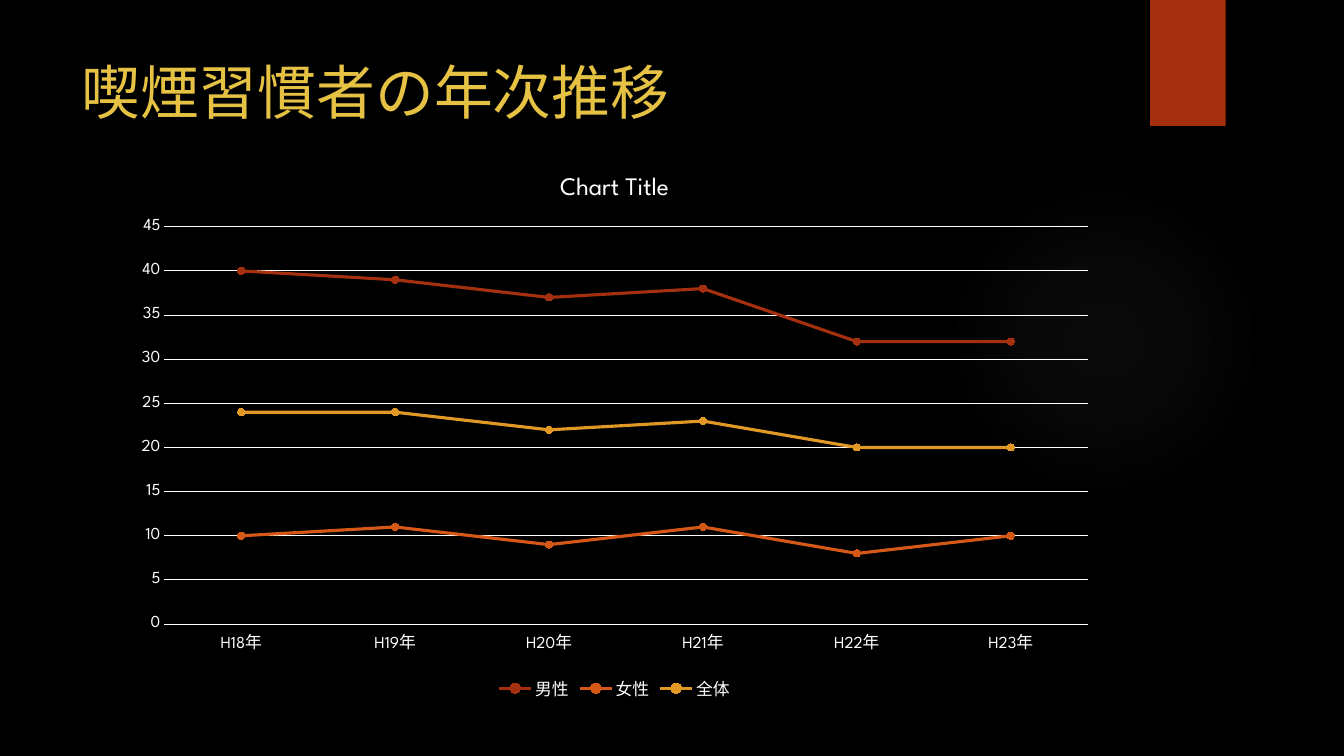
import pptx
import pptx.chart.data
import pptx.dml.color
import pptx.enum.chart
import pptx.enum.shapes
import pptx.enum.text
import pptx.oxml
import pptx.util
from lxml import etree

Pt = pptx.util.Pt
FONT = "League Spartan"
WHITE = "FFFFFF"
YEARS = ["H18年", "H19年", "H20年", "H21年", "H22年", "H23年"]
SMOKING_RATES = [
    ("男性", "A5300F", [40, 39, 37, 38, 32, 32]),
    ("女性", "D55816", [10, 11, 9, 11, 8, 10]),
    ("全体", "E19825", [24, 24, 22, 23, 20, 20]),
]


def rgb(value):
    return pptx.dml.color.RGBColor.from_string(value)


def style_font(font, size, color):
    font.name = FONT
    font.size = Pt(size)
    font.bold = False
    font.color.rgb = rgb(color)


def style_line(line, width, color):
    line.width = Pt(width)
    line.color.rgb = rgb(color)


def fill_solid(fill, color):
    fill.solid()
    fill.fore_color.rgb = rgb(color)


def add_decoration(slide, kind, left, top, width, height, color):
    decoration = slide.shapes.add_shape(
        kind, Pt(left), Pt(top), Pt(width), Pt(height))
    decoration.shadow.inherit = False
    decoration.line.fill.background()
    fill_solid(decoration.fill, color)
    return decoration


def add_glow(slide, left, top, diameter, color):
    glow = add_decoration(slide, pptx.enum.shapes.MSO_SHAPE.OVAL,
                          left, top, diameter, diameter, color)
    stops = "".join(
        f'<a:gs pos="{position * 1000}"><a:srgbClr val="{color}">'
        f'<a:alpha val="{opacity * 1000}"/></a:srgbClr></a:gs>'
        for position, opacity in [(0, 7), (36, 6), (69, 0), (100, 0)])
    gradient = pptx.oxml.parse_xml(
        '<a:gradFill xmlns:a="http://schemas.openxmlformats.org/drawingml/2006/main">'
        f'<a:gsLst>{stops}</a:gsLst><a:path path="circle">'
        '<a:fillToRect l="50000" t="50000" r="50000" b="50000"/></a:path></a:gradFill>')
    properties = glow.element.spPr
    solid = properties.find(pptx.oxml.ns.qn("a:solidFill"))
    properties.replace(solid, gradient)


def add_heading(slide, text, left, top, width, height):
    heading = slide.shapes.add_textbox(Pt(left), Pt(top), Pt(width), Pt(height))
    frame = heading.text_frame
    frame.word_wrap = True
    frame.vertical_anchor = pptx.enum.text.MSO_ANCHOR.TOP
    frame.text = text
    style_font(frame.paragraphs[0].runs[0].font, 42, "E5C243")


def style_axes(chart):
    years, rates = chart.category_axis, chart.value_axis
    for axis in (years, rates):
        axis.major_tick_mark = pptx.enum.chart.XL_TICK_MARK.NONE
        axis.minor_tick_mark = pptx.enum.chart.XL_TICK_MARK.NONE
        style_font(axis.tick_labels.font, 12, WHITE)
    style_line(years.format.line, 0.75, WHITE)
    rates.minimum_scale, rates.maximum_scale, rates.major_unit = 0, 45, 5
    rates.format.line.fill.background()
    style_line(rates.major_gridlines.format.line, 0.75, WHITE)


def style_series(series, color):
    series.smooth = False
    style_line(series.format.line, 2.25, color)
    series.marker.style = pptx.enum.chart.XL_MARKER_STYLE.CIRCLE
    series.marker.size = 5
    fill_solid(series.marker.format.fill, color)
    style_line(series.marker.format.line, 0.75, color)


def add_rate_chart(slide, left, top, width, height):
    data = pptx.chart.data.CategoryChartData()
    data.categories = YEARS
    for name, _, values in SMOKING_RATES:
        data.add_series(name, values)
    chart = slide.shapes.add_chart(
        pptx.enum.chart.XL_CHART_TYPE.LINE_MARKERS,
        Pt(left), Pt(top), Pt(width), Pt(height), data).chart
    style_font(chart.font, 10, WHITE)
    chart.has_title = True
    chart.chart_title.include_in_layout = False
    caption = chart.chart_title.text_frame
    caption.text = "Chart Title"
    style_font(caption.paragraphs[0].runs[0].font, 18, WHITE)
    chart.has_legend = True
    chart.legend.position = pptx.enum.chart.XL_LEGEND_POSITION.BOTTOM
    chart.legend.include_in_layout = False
    style_font(chart.legend.font, 12, WHITE)
    style_axes(chart)
    chart.plots[0].vary_by_categories = False
    for series, (_, color, _) in zip(chart.plots[0].series, SMOKING_RATES):
        style_series(series, color)


def main():
    deck = pptx.Presentation()
    deck.slide_width, deck.slide_height = Pt(960), Pt(540)
    slide = deck.slides.add_slide(deck.slide_layouts[6])
    fill_solid(slide.background.fill, "000000")
    add_glow(slide, 677.5, 131.8, 221.8, "848484")
    add_decoration(slide, pptx.enum.shapes.MSO_SHAPE.RECTANGLE,
                   821.5, 0, 54, 90, "A5300F")
    add_heading(slide, "喫煙習慣者の年次推移", 51, 36, 741, 110)
    add_rate_chart(slide, 87, 109.5, 704, 394)
    deck.save("out.pptx")


if __name__ == "__main__":
    main()
